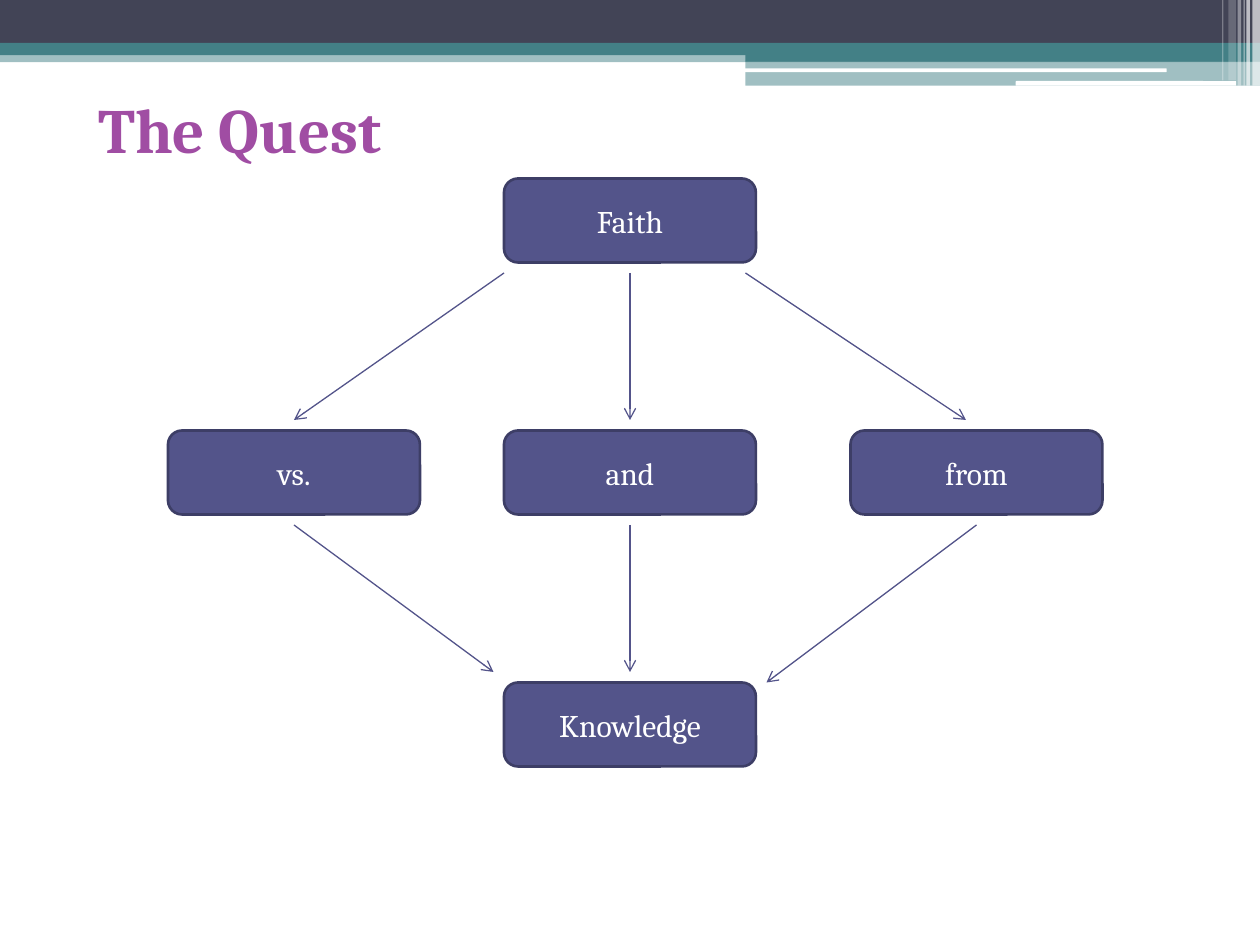
from lxml import etree
from pptx import Presentation
from pptx.dml.color import RGBColor
from pptx.enum import shapes, text
from pptx.oxml import ns
from pptx.util import Pt

FONT = "Cambria"
COLORS = {
    "slate": "424456",
    "teal": "438086",
    "white": "FFFFFF",
    "indigo": "53548A",
    "border": "3D3E66",
    "purple": "A04DA3",
}

RECT = shapes.MSO_SHAPE.RECTANGLE
ROUNDED = shapes.MSO_SHAPE.ROUNDED_RECTANGLE

# kind, left, top, width, height, colour, opacity in percent
HEADER_BANDS = [
    (RECT, 0, 29, 720, 6.5, "teal", 50),
    (RECT, 0, 0, 720, 24.5, "slate", 100),
    (RECT, 0, 24.5, 720, 7, "teal", 100),
    (RECT, 426, 28, 294, 7.2, "teal", 100),
    (RECT, 426, 34.7, 294, 14.2, "teal", 50),
    (ROUNDED, 425.5, 39.1, 241.2, 2.2, "white", 100),
    (ROUNDED, 580.4, 46.3, 126, 2.7, "white", 100),
]
# left, width, height, opacity in percent
HEADER_STRIPES = [
    (715.6, 4.4, 49, 65),
    (712.2, 2, 49, 65),
    (710.6, 0.7, 49, 60),
    (707.2, 2, 49, 40),
    (702, 4.3, 46, 20),
    (698.4, 0.7, 46, 30),
]

BOX_WIDTH, BOX_HEIGHT = 144, 48
ROW_TOPS = [102, 246, 390]
# label, left, row
BOXES = [
    ("Faith", 288, 0),
    ("Knowledge", 288, 2),
    ("and", 288, 1),
    ("from", 486, 1),
    ("vs.", 96, 1),
]
# start x, start y, end x, end y
ARROWS = [
    (360, 156, 360, 240),
    (360, 300, 360, 384),
    (426, 156, 552, 240),
    (558, 300, 438, 390),
    (288, 156, 168, 240),
    (168, 300, 282, 384),
]


def rgb(name):
    return RGBColor.from_string(COLORS[name])


def write(shape, content, *, size, color, bold=False, wrap=True,
          anchor=text.MSO_ANCHOR.MIDDLE):
    frame = shape.text_frame
    frame.word_wrap = wrap
    frame.vertical_anchor = anchor
    paragraph = frame.paragraphs[0]
    paragraph.alignment = text.PP_ALIGN.CENTER
    run = paragraph.add_run()
    run.text = content
    run.font.name = FONT
    run.font.size = Pt(size)
    run.font.bold = bold
    run.font.color.rgb = rgb(color)


def add_filled(slide, kind, left, top, width, height, color, opacity=100):
    shape = slide.shapes.add_shape(kind, Pt(left), Pt(top), Pt(width), Pt(height))
    shape.shadow.inherit = False
    shape.fill.solid()
    shape.fill.fore_color.rgb = rgb(color)
    shape.line.fill.background()
    if opacity < 100:
        fill_color = shape.fill._xPr.find(".//" + ns.qn("a:srgbClr"))
        etree.SubElement(fill_color, ns.qn("a:alpha"), val=str(opacity * 1000))
    return shape


def add_box(slide, label, left, row):
    box = add_filled(slide, ROUNDED, left, ROW_TOPS[row], BOX_WIDTH, BOX_HEIGHT,
                     "indigo")
    box.line.color.rgb = rgb("border")
    box.line.width = Pt(1.5)
    write(box, label, size=18, color="white")


def add_arrow(slide, *ends):
    arrow = slide.shapes.add_connector(
        shapes.MSO_CONNECTOR.STRAIGHT, *(Pt(value) for value in ends))
    arrow.line.color.rgb = rgb("indigo")
    arrow.line.width = Pt(0.75)
    etree.SubElement(arrow.line._get_or_add_ln(), ns.qn("a:tailEnd"), type="arrow")
    etree.SubElement(arrow._element.spPr, ns.qn("a:effectLst"))


def main():
    presentation = Presentation()
    presentation.slide_width, presentation.slide_height = Pt(720), Pt(540)
    slide = presentation.slides.add_slide(presentation.slide_layouts[6])

    for band in HEADER_BANDS:
        add_filled(slide, *band)
    for left, width, height, opacity in HEADER_STRIPES:
        add_filled(slide, RECT, left, 0, width, height, "white", opacity)
    for box in BOXES:
        add_box(slide, *box)
    for arrow in ARROWS:
        add_arrow(slide, *arrow)

    title = slide.shapes.add_textbox(Pt(36), Pt(48), Pt(202), Pt(51))
    write(title, "The Quest", size=36, color="purple", bold=True, wrap=False,
          anchor=text.MSO_ANCHOR.TOP)

    presentation.save("out.pptx")


if __name__ == "__main__":
    main()
